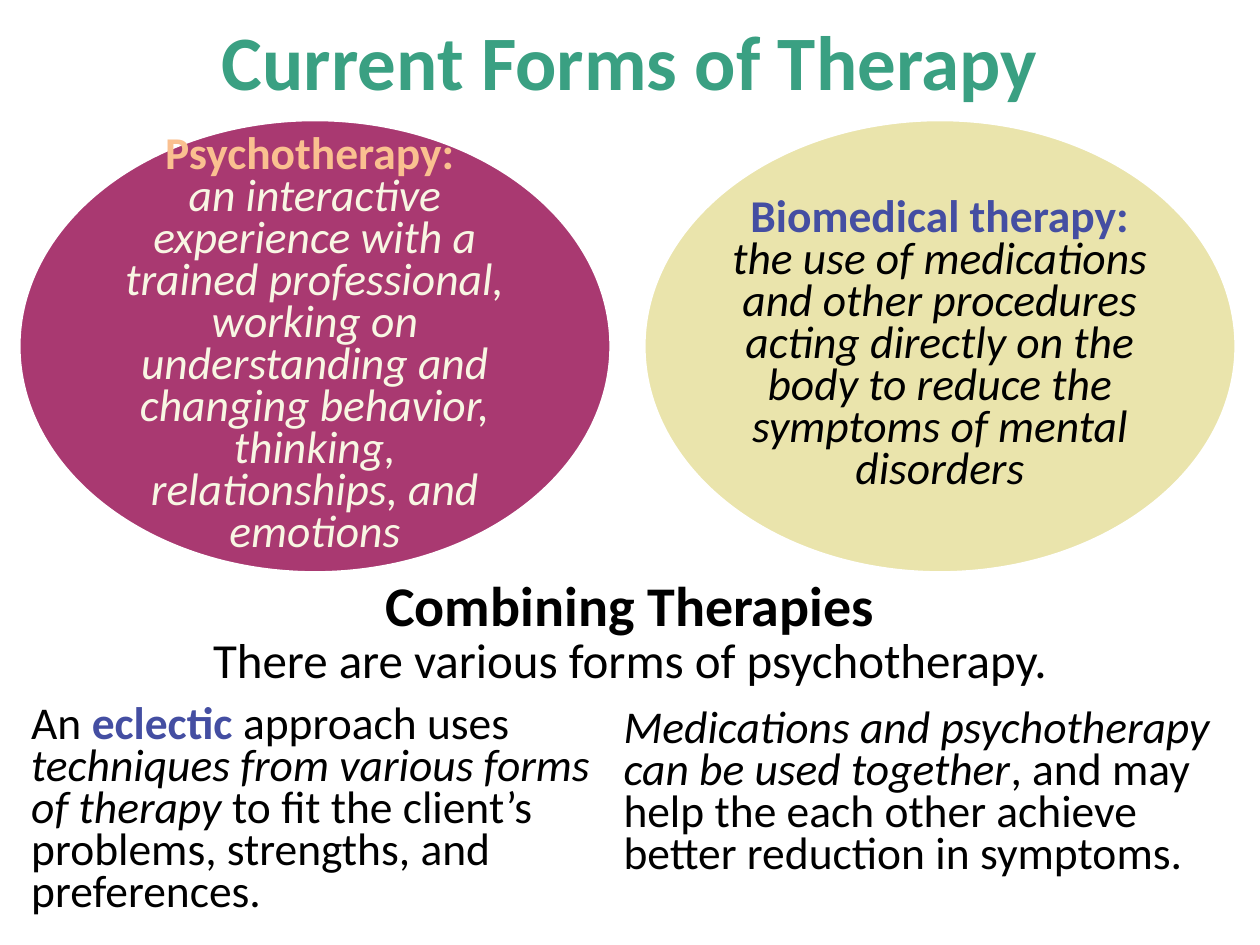
from pptx import Presentation
from pptx import util as u
from pptx.dml.color import RGBColor
from pptx.enum import shapes, text

FONT = "Calibri"
BLACK, WHITE, INDIGO = "000000", "FFFFFF", "444EA2"
TITLE = "Current Forms of Therapy"

THERAPIES = [
    ("Psychotherapy: ",
     "an interactive experience with a trained professional, working on understanding and "
     "changing behavior, thinking, relationships, and emotions",
     "A93971", "FAC090", "F8F6E3"),
    ("Biomedical therapy:",
     "the use of medications and other procedures acting directly on the body to reduce "
     "the symptoms of mental disorders",
     "EAE4AC", INDIGO, BLACK),
]

COMBINING = [
    ("There are various forms of psychotherapy.", 28, False, 12.57, 1.45),
    ("Combining Therapies", 32, True, 11.38, 3.18),
]

APPROACHES = [
    ([("An ", ""), ("eclectic ", "term"), ("approach uses ", ""),
      ("techniques from various forms of therapy", "italic"),
      (" to fit the client’s problems, strengths, and preferences.", "")],
     0.38, 14.12, 4.57),
    ([("Medications and psychotherapy can be used together", "italic"),
      (", and may help the each other achieve better reduction in symptoms.", "")],
     12.32, 14.2, 3.71),
]

SLIDE_W, SLIDE_H = 25.4, 19.05
OVAL_LEFT, OVAL_TOP, OVAL_W, OVAL_H, OVAL_STEP = 0.38, 2.41, 11.94, 9.14, 12.6
BODY_SIZE, BODY_LEADING = 26, u.Pt(24)


def rgb(code):
    return RGBColor.from_string(code)


def style(font, size, color, bold=False, italic=False):
    font.name, font.size = FONT, u.Pt(size)
    font.bold, font.italic = bold, italic
    font.color.rgb = rgb(color)


def write_line(paragraph, words, size, color, bold=False, italic=False):
    paragraph.text = words
    paragraph.alignment = text.PP_ALIGN.CENTER
    style(paragraph.font, size, color, bold, italic)


def add_oval(slide, index, name, definition, fill, name_color, definition_color):
    oval = slide.shapes.add_shape(
        shapes.MSO_SHAPE.OVAL, u.Cm(OVAL_LEFT + index * OVAL_STEP), u.Cm(OVAL_TOP),
        u.Cm(OVAL_W), u.Cm(OVAL_H))
    oval.shadow.inherit = False
    oval.fill.solid()
    oval.fill.fore_color.rgb = rgb(fill)
    oval.line.color.rgb = rgb(WHITE)
    oval.line.width = u.Pt(2)
    frame = oval.text_frame
    frame.word_wrap = True
    frame.vertical_anchor = text.MSO_ANCHOR.MIDDLE
    frame.margin_left = frame.margin_right = frame.margin_top = frame.margin_bottom = 0
    write_line(frame.paragraphs[0], name, BODY_SIZE, name_color, bold=True)
    write_line(frame.add_paragraph(), definition, BODY_SIZE, definition_color, italic=True)
    for paragraph in frame.paragraphs:
        paragraph.line_spacing = BODY_LEADING


def add_paragraph_box(slide, left, top, width, height):
    box = slide.shapes.add_textbox(u.Cm(left), u.Cm(top), u.Cm(width), u.Cm(height))
    box.text_frame.word_wrap = True
    return box.text_frame.paragraphs[0]


def main():
    deck = Presentation()
    deck.slide_width, deck.slide_height = u.Cm(SLIDE_W), u.Cm(SLIDE_H)
    slide = deck.slides.add_slide(deck.slide_layouts[5])

    title = slide.shapes.title
    title.left, title.top, title.width, title.height = 0, u.Cm(0.13), u.Cm(SLIDE_W), u.Cm(2.13)
    title.text_frame.vertical_anchor = text.MSO_ANCHOR.MIDDLE
    write_line(title.text_frame.paragraphs[0], TITLE, 44, "3AA082", bold=True)

    for index, therapy in enumerate(THERAPIES):
        add_oval(slide, index, *therapy)

    for words, size, bold, top, height in COMBINING:
        write_line(add_paragraph_box(slide, 0, top, SLIDE_W, height), words, size, BLACK, bold)

    for runs, left, top, height in APPROACHES:
        paragraph = add_paragraph_box(slide, left, top, 12.7, height)
        paragraph.line_spacing = BODY_LEADING
        for words, role in runs:
            run = paragraph.add_run()
            run.text = words
            style(run.font, BODY_SIZE, INDIGO if role == "term" else BLACK,
                  role == "term", role == "italic")

    deck.save("out.pptx")


if __name__ == "__main__":
    main()
